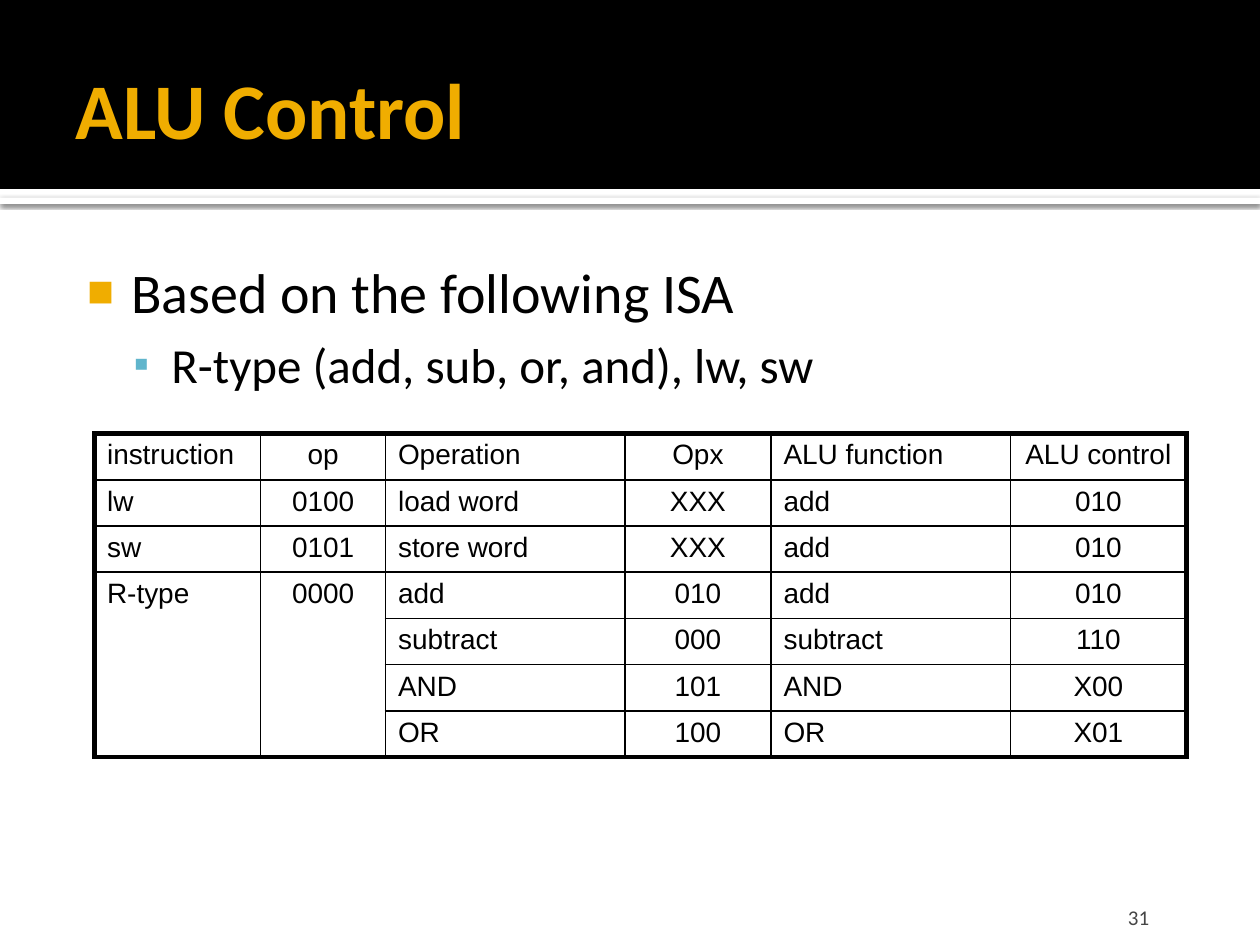
from lxml.etree import SubElement
from pptx import Presentation
from pptx.dml.color import RGBColor
from pptx.enum.shapes import MSO_SHAPE
from pptx.enum.text import MSO_ANCHOR, PP_ALIGN
from pptx.oxml.ns import qn
from pptx.util import Pt

BLACK, WHITE, GOLD, BLUE, GRAY = "000000", "FFFFFF", "F0AD00", "60B5CC", "454545"

COLUMN_WIDTHS = [95, 71.3, 136.8, 83.5, 136.8, 100.6]
ROWS = [
    ["instruction", "op", "Operation", "Opx", "ALU function", "ALU control"],
    ["lw", "0100", "load word", "XXX", "add", "010"],
    ["sw", "0101", "store word", "XXX", "add", "010"],
    ["R-type", "0000", "add", "010", "add", "010"],
    ["", "", "subtract", "000", "subtract", "110"],
    ["", "", "AND", "101", "AND", "X00"],
    ["", "", "OR", "100", "OR", "X01"],
]
R_TYPE_ROW = 3
MERGED_COLUMNS = 2
THICK, MEDIUM, THIN = 3, 1.5, 1


def color(value):
    return RGBColor.from_string(value)


def add_child(parent, tag, **attributes):
    return SubElement(parent, qn(tag), {name: str(value) for name, value in attributes.items()})


def format_runs(paragraph, size, font, fill, bold=False):
    for run in paragraph.runs:
        run.font.size = Pt(size)
        run.font.name = font
        run.font.bold = bold
        run.font.color.rgb = color(fill)


def place(shape, left, top, width, height):
    shape.left, shape.top, shape.width, shape.height = Pt(left), Pt(top), Pt(width), Pt(height)


def set_frame(text_frame, anchor, left, top, right, bottom):
    text_frame.word_wrap = True
    text_frame.vertical_anchor = anchor
    text_frame.margin_left, text_frame.margin_top = Pt(left), Pt(top)
    text_frame.margin_right, text_frame.margin_bottom = Pt(right), Pt(bottom)


def add_bar(slide, position, left, top, width, height, fill):
    """Add a bar behind the placeholders, at the given place in the stack."""
    bar = slide.shapes.add_shape(MSO_SHAPE.RECTANGLE, Pt(left), Pt(top), Pt(width), Pt(height))
    bar.shadow.inherit = False
    bar.fill.solid()
    bar.fill.fore_color.rgb = color(fill)
    bar.line.fill.background()
    slide.shapes._spTree.insert(2 + position, bar._element)
    return bar


def add_header(slide, left, top, width, height):
    strip = add_bar(slide, 0, left, top + height + 5, width, 3.6, WHITE)
    add_bar(slide, 1, left, top, width, height, BLACK)
    effects = strip._element.spPr.find(qn("a:effectLst"))
    shadow = add_child(effects, "a:outerShdw", blurRad=Pt(2.5), dist=Pt(0.8),
                       dir=90 * 60000, algn="tl", rotWithShape=0)
    shadow_color = add_child(shadow, "a:srgbClr", val=BLACK)
    add_child(shadow_color, "a:alpha", val=60000)


def fill_title(title, left, top, width, height):
    place(title, left, top, width, height)
    title.text_frame.text = "ALU Control"
    set_frame(title.text_frame, MSO_ANCHOR.MIDDLE, 7.2, 3.6, 3.6, 3.6)
    paragraph = title.text_frame.paragraphs[0]
    paragraph.alignment = PP_ALIGN.LEFT
    format_runs(paragraph, 45, "Calibri", GOLD, bold=True)


def set_bullet(paragraph, character, fill, percent, margin, indent):
    properties = paragraph._p.get_or_add_pPr()
    properties.set("marL", str(Pt(margin)))
    properties.set("indent", str(Pt(indent)))
    bullet_color = add_child(properties, "a:buClr")
    add_child(bullet_color, "a:srgbClr", val=fill)
    add_child(properties, "a:buSzPct", val=percent * 1000)
    add_child(properties, "a:buFont", typeface="Arial")
    add_child(properties, "a:buChar", char=character)


def fill_body(body, left, top, width, height):
    place(body, left, top, width, height)
    text_frame = body.text_frame
    set_frame(text_frame, MSO_ANCHOR.TOP, 4.3, 7.2, 7.2, 3.6)
    text_frame.text = "Based on the following ISA"
    first = text_frame.paragraphs[0]
    format_runs(first, 32, "Calibri", BLACK)
    set_bullet(first, "■", GOLD, 80, 34.6, -25.2)
    second = text_frame.add_paragraph()
    second.text = "R-type (add, sub, or, and), lw, sw"
    second.level = 1
    format_runs(second, 28, "Calibri", BLACK)
    set_bullet(second, "▪", BLUE, 90, 57.6, -21.6)


def set_borders(cell, **widths):
    """Draw each named side in black; a width of 0 leaves it open."""
    properties = cell._tc.get_or_add_tcPr()
    for side, width in widths.items():
        line = add_child(properties, f"a:ln{side}", w=Pt(width))
        if width:
            add_child(add_child(line, "a:solidFill"), "a:srgbClr", val=BLACK)
        else:
            add_child(line, "a:noFill")


def border_widths(cell, row, column):
    last_row, last_column = len(ROWS) - 1, len(COLUMN_WIDTHS) - 1
    top = {0: THICK, 1: MEDIUM}.get(row, THIN)
    bottom = {0: MEDIUM, last_row: THICK}.get(row, THIN)
    if cell.is_merge_origin:
        bottom = THICK
    elif cell.is_spanned:
        top, bottom = 0, THICK if row == last_row else 0
    return {"L": THIN if column else THICK,
            "R": THICK if column == last_column else THIN,
            "T": top, "B": bottom}


def add_control_table(slide, left, top, height):
    frame = slide.shapes.add_table(len(ROWS), len(COLUMN_WIDTHS), Pt(left), Pt(top),
                                   Pt(sum(COLUMN_WIDTHS)), Pt(height))
    table = frame.table
    table.first_row = table.horz_banding = False
    for column, width in zip(table.columns, COLUMN_WIDTHS):
        column.width = Pt(width)
    for column in range(MERGED_COLUMNS):
        table.cell(R_TYPE_ROW, column).merge(table.cell(len(ROWS) - 1, column))
    for row, texts in enumerate(ROWS):
        table.rows[row].height = Pt(height / len(ROWS))
        for column, text in enumerate(texts):
            cell = table.cell(row, column)
            set_borders(cell, **border_widths(cell, row, column))
            cell.fill.background()
            if cell.is_spanned:
                continue
            cell.text_frame.text = text
            paragraph = cell.text_frame.paragraphs[0]
            paragraph.space_before = Pt(3.2)
            paragraph.alignment = PP_ALIGN.CENTER if column % 2 else PP_ALIGN.LEFT
            format_runs(paragraph, 16, "Arial", BLACK)


def add_page_number(slide, left, top, width, height):
    box = slide.shapes.add_textbox(Pt(left), Pt(top), Pt(width), Pt(height))
    set_frame(box.text_frame, MSO_ANCHOR.BOTTOM, 7.2, 3.6, 7.2, 0)
    box.text_frame.text = "31"
    paragraph = box.text_frame.paragraphs[0]
    paragraph.alignment = PP_ALIGN.RIGHT
    format_runs(paragraph, 12, "Calibri", GRAY)


def main():
    presentation = Presentation()
    presentation.slide_width, presentation.slide_height = Pt(720), Pt(540)
    slide = presentation.slides.add_slide(presentation.slide_layouts[1])
    add_header(slide, 0, 0, 720, 108)
    fill_title(slide.shapes.title, 36, 12.2, 648, 98.6)
    fill_body(slide.placeholders[1], 36, 139.7, 648, 364.3)
    add_control_table(slide, 54, 247.7, 185)
    add_page_number(slide, 606.2, 509.8, 57.6, 21.6)
    presentation.save("out.pptx")


if __name__ == "__main__":
    main()
